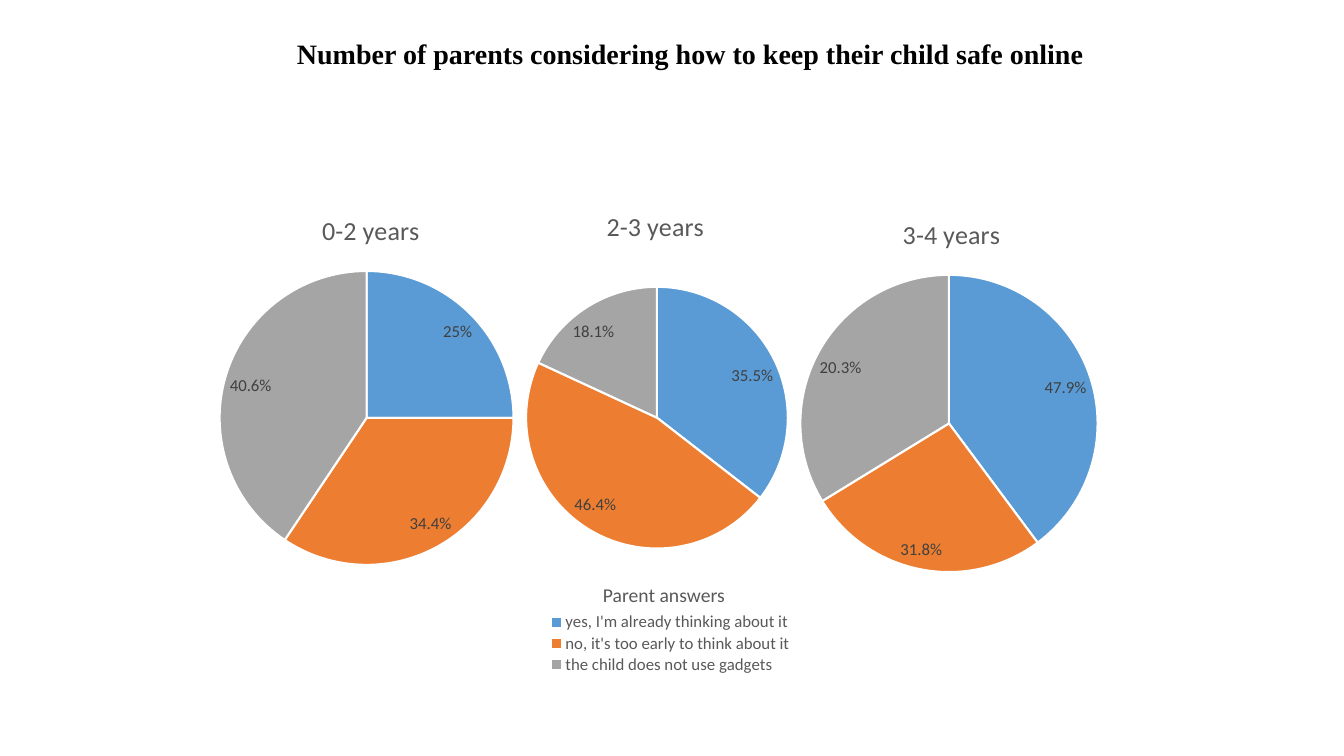
"""Builds a slide with three pie charts on parents' attitudes to online safety."""
from pptx import Presentation
from pptx import util as u
from pptx.chart import data as chart_data
from pptx.dml import color
from pptx.enum import chart as ch, text
from pptx.oxml import parse_xml
from pptx.oxml.ns import nsdecls, qn

HEADLINE = "Number of parents considering how to keep their child safe online"
HEADLINE_BOX = (183.6, 22.4, 619.2, 31.7)
LEGEND_HEADING = "Parent answers"
LEGEND_HEADING_BOX = (423.6, 412.6, 102.3, 24.5)
LEGEND_BOX = (388, 436.3, 182, 47)
AGE_SIZE = (69.4, 22.8)
ANSWERS = ["yes, I'm already thinking about it",
           "no, it's too early to think about it",
           "the child does not use gadgets"]
NUMBERS = ["1", "2", "3"]
AGE_GROUPS = [
    {"age": "0-2 years", "shares": (25, 34.4, 40.6), "labels": ("25%", "34.4%", "40.6%"),
     "categories": NUMBERS, "box": (74.9, 143.3, 374.4, 270),
     "age_at": (226.8, 148), "centre": (261.9, 298.6), "radius": 105},
    {"age": "2-3 years", "shares": (35.5, 46.4, 18.1), "labels": ("35.5%", "46.4%", "18.1%"),
     "categories": ANSWERS, "box": (275, 141.1, 380.2, 342),
     "age_at": (430, 145.1), "centre": (469.3, 298.4), "radius": 93.5,
     "legend": LEGEND_BOX},
    {"age": "3-4 years", "shares": (47.9, 31.8, 40.6), "labels": ("47.9%", "31.8%", "20.3%"),
     "categories": NUMBERS, "box": (528.5, 146.2, 298.1, 272.2),
     "age_at": (641.5, 150.8), "centre": (677.9, 302.5), "radius": 106.2},
]
COLORS = {"slices": ("5B9BD5", "ED7D31", "A5A5A5"), "edge": "FFFFFF",
          "label": "404040", "muted": "595959", "headline": "000000"}
BODY_FONT, HEADLINE_FONT = "Calibri", "Times New Roman"


def points(box):
    return [u.Pt(length) for length in box]


def style(font, size, hex_color, name=BODY_FONT, bold=False):
    font.size, font.name, font.bold = u.Pt(size), name, bold
    font.color.rgb = color.RGBColor.from_string(hex_color)


def layout_xml(box, frame, target=""):
    left, top, width, height = box
    fractions = {"x": (left - frame[0]) / frame[2], "y": (top - frame[1]) / frame[3],
                 "w": width / frame[2], "h": height / frame[3]}
    values = "".join(f'<c:{key} val="{value:.4f}"/>' for key, value in fractions.items())
    return parse_xml(f'<c:layout {nsdecls("c")}><c:manualLayout>{target}'
                     f'<c:xMode val="edge"/><c:yMode val="edge"/>{values}'
                     '</c:manualLayout></c:layout>')


def drop_layout(parent):
    for layout in parent.findall(qn("c:layout")):
        parent.remove(layout)


def place_part(pie, tag, box, frame):
    part = pie.element.find(qn("c:chart")).find(qn(tag))
    drop_layout(part)
    part.find(qn("c:overlay")).addprevious(layout_xml(box, frame))


def add_pie(slide, group):
    frame = group["box"]
    shares = chart_data.CategoryChartData(number_format="0.0")
    shares.categories = group["categories"]
    shares.add_series("Series 1", group["shares"])
    pie = slide.shapes.add_chart(ch.XL_CHART_TYPE.PIE, *points(frame), shares).chart
    style(pie.font, 10, COLORS["headline"])
    pie.has_title = True
    pie.chart_title.include_in_layout = False
    age = pie.chart_title.text_frame
    age.text = group["age"]
    style(age.paragraphs[0].runs[0].font, 18.6, COLORS["muted"])
    place_part(pie, "c:title", group["age_at"] + AGE_SIZE, frame)

    plot = pie.plots[0]
    plot.vary_by_categories = True
    answers = plot.series[0]
    labels = answers.data_labels
    labels.show_value = True
    labels.show_percentage = False
    labels.number_format = "0.0"
    labels.number_format_is_linked = False
    labels.position = ch.XL_LABEL_POSITION.BEST_FIT
    style(labels.font, 12, COLORS["label"])
    for index, (share, hex_color) in enumerate(zip(group["labels"], COLORS["slices"])):
        answer = answers.points[index]
        answer.format.fill.solid()
        answer.format.fill.fore_color.rgb = color.RGBColor.from_string(hex_color)
        answer.format.line.color.rgb = color.RGBColor.from_string(COLORS["edge"])
        answer.format.line.width = u.Pt(1.5)
        label = answer.data_label
        label.text_frame.text = share
        style(label.text_frame.paragraphs[0].runs[0].font, 12, COLORS["label"])
        label.position = ch.XL_LABEL_POSITION.BEST_FIT

    pie.has_legend = "legend" in group
    if pie.has_legend:
        pie.legend.position = ch.XL_LEGEND_POSITION.BOTTOM
        pie.legend.include_in_layout = False
        style(pie.legend.font, 12, COLORS["muted"])
        place_part(pie, "c:legend", group["legend"], frame)

    (x, y), radius = group["centre"], group["radius"]
    circle_box = (x - radius, y - radius, 2 * radius, 2 * radius)
    plot_area = pie.element.find(".//" + qn("c:plotArea"))
    drop_layout(plot_area)
    plot_area.insert(0, layout_xml(circle_box, frame, '<c:layoutTarget val="inner"/>'))
    pie.element.find(qn("c:chart")).addnext(parse_xml(
        f'<c:spPr {nsdecls("c", "a")}><a:noFill/><a:ln><a:noFill/></a:ln></c:spPr>'))


def main():
    deck = Presentation()
    deck.slide_width, deck.slide_height = u.Pt(960), u.Pt(540)
    slide = deck.slides.add_slide(deck.slide_layouts[5])

    headline = slide.shapes.title
    headline.left, headline.top, headline.width, headline.height = points(HEADLINE_BOX)
    headline.text_frame.text = HEADLINE
    headline.text_frame.vertical_anchor = text.MSO_ANCHOR.TOP
    headline.text_frame.paragraphs[0].alignment = text.PP_ALIGN.CENTER
    style(headline.text_frame.paragraphs[0].runs[0].font, 20, COLORS["headline"],
          HEADLINE_FONT, True)

    for group in AGE_GROUPS:
        add_pie(slide, group)

    heading = slide.shapes.add_textbox(*points(LEGEND_HEADING_BOX)).text_frame
    heading.text = LEGEND_HEADING
    heading.word_wrap = False
    style(heading.paragraphs[0].runs[0].font, 14, COLORS["muted"])

    deck.save("out.pptx")


if __name__ == "__main__":
    main()
